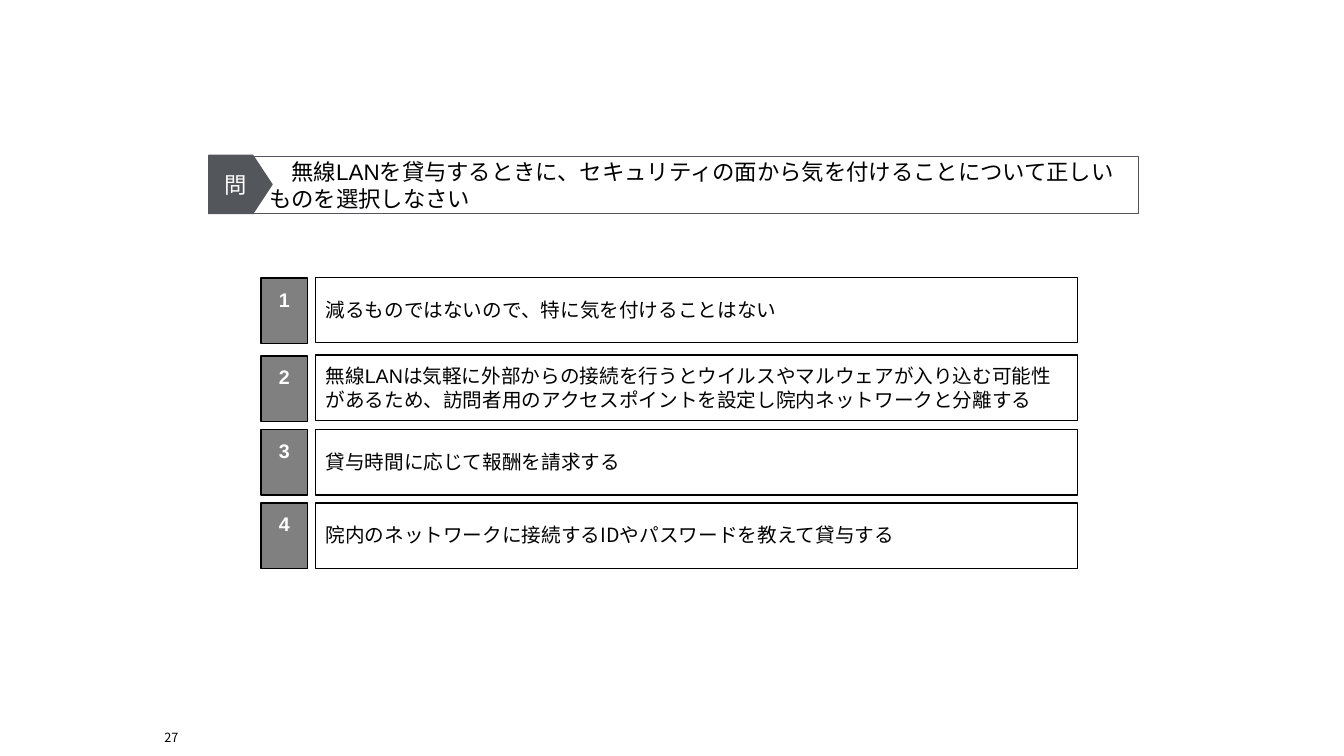
from lxml import etree
from pptx import Presentation, util as u
from pptx.dml.color import RGBColor
from pptx.enum import shapes, text
from pptx.oxml.ns import qn

PX = 9144  # 100 px to the inch
ARIAL, NOTO = "Arial", "Noto Sans CJK JP"
BLACK, WHITE, SLATE, GRAY = "000000", "FFFFFF", "53565A", "808080"
LEFT, CENTER, RIGHT = text.PP_ALIGN.LEFT, text.PP_ALIGN.CENTER, text.PP_ALIGN.RIGHT

# Top of each choice, top of its number, wording, font, line spacing
CHOICES = [
    (275, 276, "減るものではないので、特に気を付けることはない", ARIAL, None),
    (352, 353, "無線LANは気軽に外部からの接続を行うとウイルスやマルウェアが入り込む可能性"
               "があるため、訪問者用のアクセスポイントを設定し院内ネットワークと分離する", ARIAL, None),
    (426, 426, "貸与時間に応じて報酬を請求する", ARIAL, None),
    (499, 499, "院内のネットワークに接続するIDやパスワードを教えて貸与する", NOTO, u.Pt(15)),
]


def color(value):
    return RGBColor.from_string(value)


def write(sp, words, size, font=ARIAL, ink=BLACK, align=LEFT, bold=False,
          wrap=True, anchor=text.MSO_ANCHOR.MIDDLE, insets=None, spacing=None):
    tf = sp.text_frame
    tf.word_wrap = wrap
    tf.vertical_anchor = anchor
    if insets:
        (tf.margin_left, tf.margin_top,
         tf.margin_right, tf.margin_bottom) = [n * PX for n in insets]
    p = tf.paragraphs[0]
    p.alignment = align
    p.line_spacing = spacing
    p.add_run().text = words
    p.font.name, p.font.size, p.font.bold = font, u.Pt(size), bold
    p.font.color.rgb = color(ink)
    # Japanese typeface
    etree.SubElement(p._p.pPr.find(qn("a:defRPr")), qn("a:ea"), typeface=NOTO)


def box(s, at, fill=None, line=BLACK, weight=1, kind=shapes.MSO_SHAPE.RECTANGLE):
    sp = s.shapes.add_shape(kind, *[n * PX for n in at])
    sp.shadow.inherit = False
    if fill:
        sp.fill.solid()
        sp.fill.fore_color.rgb = color(fill)
    else:
        sp.fill.background()
    sp.line.color.rgb = color(line)
    sp.line.width = u.Pt(weight)
    return sp


def question(s, words):
    frame = box(s, (239, 155, 890, 57), WHITE, SLATE)
    write(frame, words, 16, insets=(28, 4, 4, 4))
    tag = box(s, (207, 154, 63, 58), SLATE, SLATE, 0.75, shapes.MSO_SHAPE.PENTAGON)
    tag.adjustments[0] = 0.33
    write(tag, "問", 16, NOTO, WHITE, CENTER, wrap=False)


def choice(s, number, top, number_top, words, font, spacing):
    write(box(s, (313, top, 756, 65)), words, 14, font, spacing=spacing)
    # The full-width space wraps and lifts the digit
    write(box(s, (259, number_top, 46, 65), GRAY), f"{number}　", 14,
          ink=WHITE, align=CENTER, bold=True)


def page_number(s, number):
    sp = s.shapes.add_textbox(*[n * PX for n in (157, 720, 20, 19)])
    write(sp, number, 9, NOTO, align=RIGHT, wrap=False,
          anchor=text.MSO_ANCHOR.BOTTOM, insets=(0, 0, 0, 0))


def main():
    prs = Presentation()
    prs.slide_width, prs.slide_height = 1333 * PX, 750 * PX
    s = prs.slides.add_slide(prs.slide_layouts[6])
    page_number(s, "27")
    question(s, "　無線LANを貸与するときに、セキュリティの面から気を付けることについて"
                "正しいものを選択しなさい")
    for number, row in enumerate(CHOICES, 1):
        choice(s, number, *row)
    prs.save("out.pptx")


if __name__ == "__main__":
    main()
